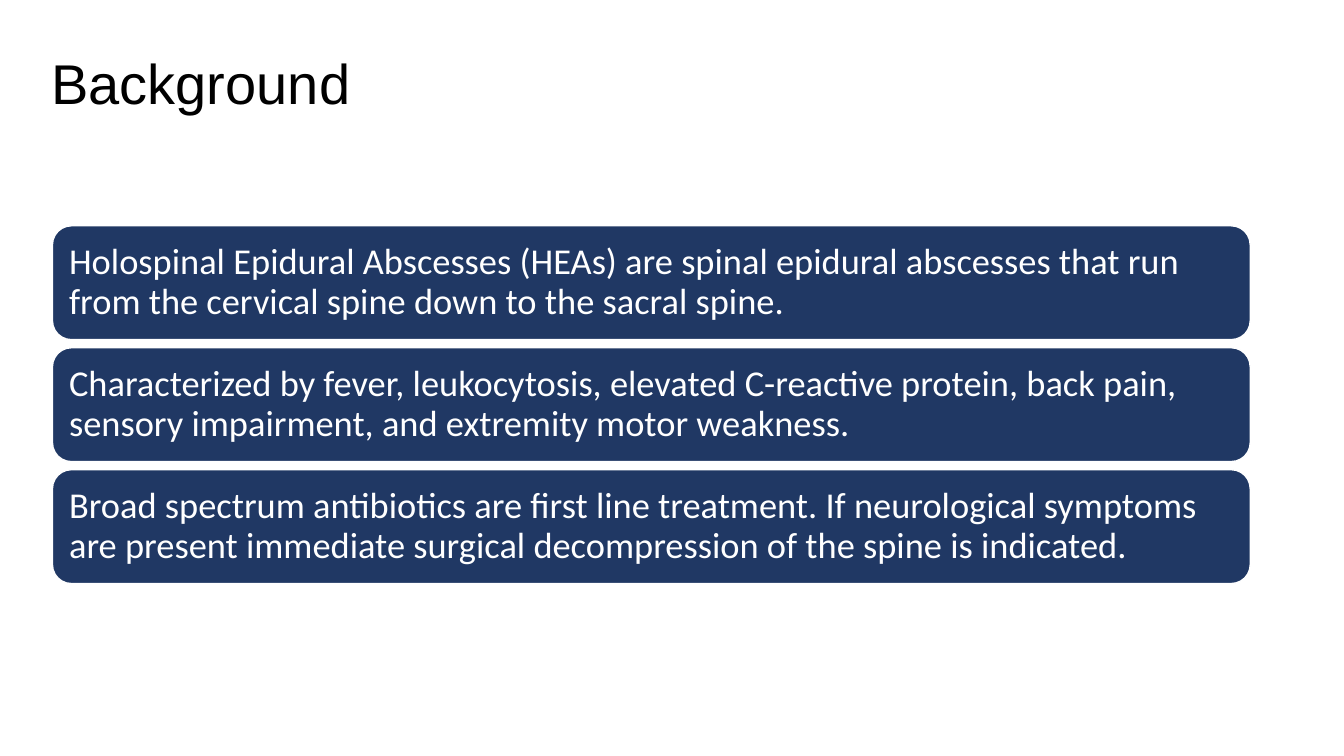
"""Build the Background slide: a title above three stacked statement panels."""
from pptx import Presentation
from pptx.dml.color import RGBColor
from pptx.enum.shapes import MSO_SHAPE
from pptx.enum.text import MSO_ANCHOR, MSO_AUTO_SIZE, PP_ALIGN
from pptx.util import Inches, Pt

NAVY = RGBColor(0x20, 0x38, 0x64)
WHITE = RGBColor(0xFF, 0xFF, 0xFF)
BLACK = RGBColor(0x00, 0x00, 0x00)
ROUNDED = MSO_SHAPE.ROUNDED_RECTANGLE
TOP, MIDDLE = MSO_ANCHOR.TOP, MSO_ANCHOR.MIDDLE
LEFT = PP_ALIGN.LEFT
GROW = MSO_AUTO_SIZE.SHAPE_TO_FIT_TEXT
TITLE_ONLY = 5

PANEL_LEFT, PANEL_TOP = 0.52, 2.24
PANEL_WIDTH, PANEL_HEIGHT = 11.88, 1.13
PANEL_STEP = 1.21
PANEL_INSET = Inches(0.11)

STATEMENTS = [
    "Holospinal Epidural Abscesses (HEAs) are spinal epidural abscesses that run "
    "from the cervical spine down to the sacral spine.",
    "Characterized by fever, leukocytosis, elevated C-reactive protein, back pain, "
    "sensory impairment, and extremity motor weakness.",
    "Broad spectrum antibiotics are first line treatment. If neurological symptoms "
    "are present immediate surgical decompression of the spine is indicated.",
]


def add_run(para, text, font_name, size, color):
    """Add one formatted run to a left-aligned paragraph."""
    para.alignment = LEFT
    run = para.add_run()
    run.text = text
    run.font.name = font_name
    run.font.size = Pt(size)
    run.font.color.rgb = color


deck = Presentation()
deck.slide_width = Inches(13.33)
deck.slide_height = Inches(7.5)
page = deck.slides.add_slide(deck.slide_layouts[TITLE_ONLY])

title = page.shapes.title
title.left, title.top = Inches(0.41), Inches(0.43)
title.width, title.height = Inches(3.2), Inches(1.08)
title.text_frame.word_wrap = False
title.text_frame.auto_size = GROW
title.text_frame.vertical_anchor = TOP
add_run(title.text_frame.paragraphs[0], "Background", "Arial", 40, BLACK)

for row, statement in enumerate(STATEMENTS):
    panel = page.shapes.add_shape(
        ROUNDED,
        Inches(PANEL_LEFT), Inches(PANEL_TOP + row * PANEL_STEP),
        Inches(PANEL_WIDTH), Inches(PANEL_HEIGHT),
    )
    panel.name = f"Statement {row + 1}"
    panel.shadow.inherit = False
    panel.fill.solid()
    panel.fill.fore_color.rgb = NAVY
    panel.line.color.rgb = WHITE
    panel.line.width = Pt(1)

    frame = panel.text_frame
    frame.word_wrap = True
    frame.vertical_anchor = MIDDLE
    frame.margin_left = frame.margin_right = PANEL_INSET
    frame.margin_top = frame.margin_bottom = PANEL_INSET
    para = frame.paragraphs[0]
    para.line_spacing = 0.9
    add_run(para, statement, "Calibri", 26, WHITE)

deck.save("out.pptx")
